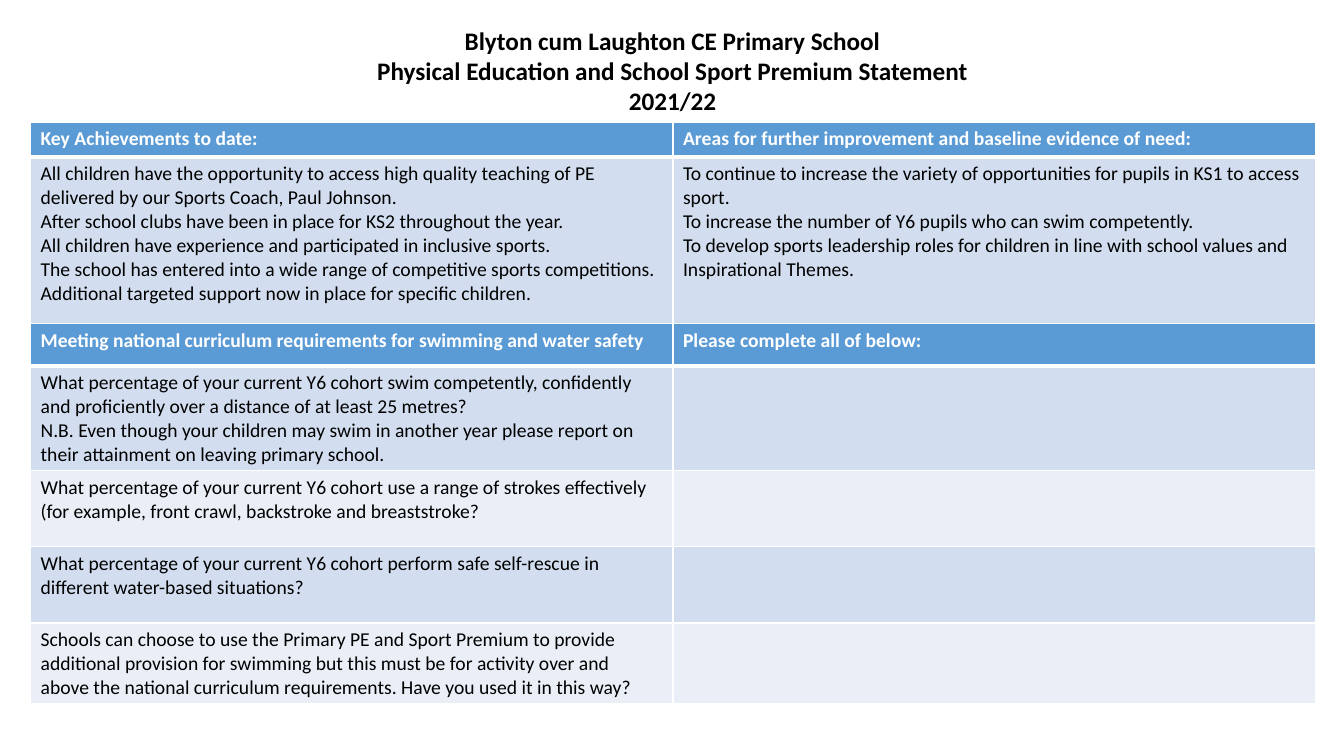
from dataclasses import dataclass

from lxml import etree
from pptx import Presentation
from pptx.dml.color import RGBColor
from pptx.enum.text import PP_ALIGN
from pptx.oxml.ns import qn
from pptx.util import Cm, Pt

CENTER = PP_ALIGN.CENTER
FONT = "Calibri"
COLORS = {
    "head": "5B9BD5",
    "dark": "D2DEEF",
    "light": "EAEFF7",
    "text": "000000",
    "white": "FFFFFF",
}
LEFT = 0.77
COLUMN = 16.19


@dataclass
class Row:
    height: float
    fill: str
    left: list[str]
    right: list[str]


@dataclass
class Grid:
    top: float
    rows: list[Row]


TITLE = [
    "Blyton cum Laughton CE Primary School",
    "Physical Education and School Sport Premium Statement",
    "2021/22",
]

GRIDS = [
    Grid(3.08, [
        Row(0.88, "head", ["Key Achievements to date:"],
            ["Areas for further improvement and baseline evidence of need:"]),
        Row(4.4, "dark", [
            "All children have the opportunity to access high quality teaching of PE "
            "delivered by our Sports Coach, Paul Johnson.",
            "After school clubs have been in place for KS2 throughout the year.",
            "All children have experience and participated in inclusive sports.",
            "The school has entered into a wide range of competitive sports competitions.",
            "Additional targeted support now in place for specific children.",
        ], [
            "To continue to increase the variety of opportunities for pupils in KS1 "
            "to access sport.",
            "To increase the number of Y6 pupils who can swim competently.",
            "To develop sports leadership roles for children in line with school "
            "values and Inspirational Themes.",
        ]),
    ]),
    Grid(8.15, [
        Row(1.08, "head",
            ["Meeting national curriculum requirements for swimming and water safety"],
            ["Please complete all of below:"]),
        Row(2.62, "dark", [
            "What percentage of your current Y6 cohort swim competently, confidently "
            "and proficiently over a distance of at least 25 metres?",
            "N.B. Even though your children may swim in another year please report on "
            "their attainment on leaving primary school.",
        ], []),
        Row(1.92, "light", [
            "What percentage of your current Y6 cohort use a range of strokes "
            "effectively (for example, front crawl, backstroke and breaststroke?",
        ], []),
        Row(1.92, "dark", [
            "What percentage of your current Y6 cohort perform safe self-rescue in "
            "different water-based situations?",
        ], []),
        Row(2.0, "light", [
            "Schools can choose to use the Primary PE and Sport Premium to provide "
            "additional provision for swimming but this must be for activity over and "
            "above the national curriculum requirements. Have you used it in this way?",
        ], []),
    ]),
]


def write(frame, lines: list[str], size: int, color: str, bold: bool, align=None) -> None:
    frame.text = "\n".join(lines)
    for para in frame.paragraphs:
        para.alignment = align
        para.font.name = FONT
        para.font.size = Pt(size)
        para.font.bold = bold
        para.font.color.rgb = RGBColor.from_string(COLORS[color])


def edge(cell, side: str, width: float) -> None:
    props = cell._tc.get_or_add_tcPr()
    line = etree.SubElement(props, qn(f"a:ln{side}"), w=str(Pt(width)))
    solid = etree.SubElement(line, qn("a:solidFill"))
    etree.SubElement(solid, qn("a:srgbClr"), val=COLORS["white"])


def draw_cell(cell, lines: list[str], fill: str, above: str) -> None:
    head = fill == "head"
    write(cell.text_frame, lines, 14, "white" if head else "text", head)
    edge(cell, "L", 1)
    edge(cell, "R", 1)
    edge(cell, "T", 3 if above == "head" else 1)
    edge(cell, "B", 3 if head else 1)
    cell.fill.solid()
    cell.fill.fore_color.rgb = RGBColor.from_string(COLORS[fill])


def draw_grid(slide, grid: Grid) -> None:
    height = sum(row.height for row in grid.rows)
    table = slide.shapes.add_table(
        len(grid.rows), 2, Cm(LEFT), Cm(grid.top), Cm(2 * COLUMN), Cm(height)
    ).table
    for column in table.columns:
        column.width = Cm(COLUMN)
    above = ""
    for index, row in enumerate(grid.rows):
        table.rows[index].height = Cm(row.height)
        for side, lines in enumerate((row.left, row.right)):
            draw_cell(table.cell(index, side), lines, row.fill, above)
        above = row.fill


def main() -> None:
    deck = Presentation()
    deck.slide_width, deck.slide_height = Cm(33.87), Cm(19.05)
    slide = deck.slides.add_slide(deck.slide_layouts[6])
    box = slide.shapes.add_textbox(Cm(4.39), Cm(0.51), Cm(25.12), Cm(2.57))
    box.text_frame.word_wrap = True
    write(box.text_frame, TITLE, 18, "text", True, CENTER)
    for grid in GRIDS:
        draw_grid(slide, grid)
    deck.save("out.pptx")


if __name__ == "__main__":
    main()
